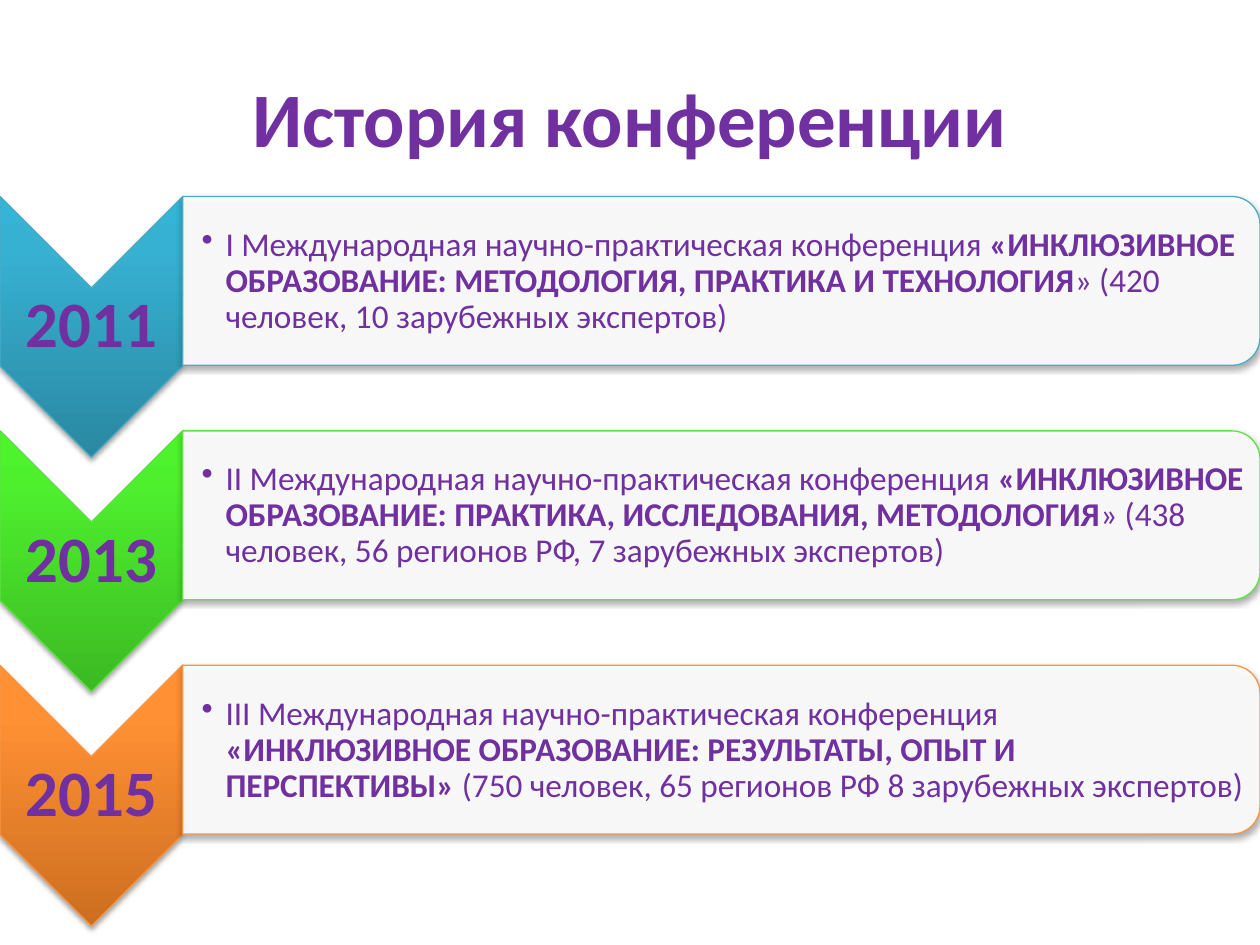
from lxml import etree
from pptx import Presentation
from pptx.dml.color import RGBColor
from pptx.enum import shapes, text
from pptx.oxml import ns, parse_xml
from pptx.util import Inches, Pt

TITLE = "История конференции"
# Year, gradient from bottom to top, outline, (plain, bold, plain) description
EVENTS = [
    ("2011", ("2A88A2", "37B1D2", "34B4D6"), RGBColor(0x4B, 0xAC, 0xC6),
     ("I Международная научно-практическая конференция ",
      "«ИНКЛЮЗИВНОЕ ОБРАЗОВАНИЕ: МЕТОДОЛОГИЯ, ПРАКТИКА И ТЕХНОЛОГИЯ",
      "» (420 человек, 10 зарубежных экспертов)")),
    ("2013", ("3CB923", "4EF02E", "4CF52A"), RGBColor(0x60, 0xE1, 0x46),
     ("II Международная научно-практическая конференция ",
      "«ИНКЛЮЗИВНОЕ ОБРАЗОВАНИЕ: ПРАКТИКА, ИССЛЕДОВАНИЯ, МЕТОДОЛОГИЯ",
      "» (438 человек, 56 регионов РФ, 7 зарубежных экспертов)")),
    ("2015", ("CC6E20", "FF9034", "FF9136"), RGBColor(0xF7, 0x96, 0x46),
     ("III Международная научно-практическая конференция ",
      "«ИНКЛЮЗИВНОЕ ОБРАЗОВАНИЕ: РЕЗУЛЬТАТЫ, ОПЫТ И ПЕРСПЕКТИВЫ»",
      " (750 человек, 65 регионов РФ 8 зарубежных экспертов)")),
]
STOPS = (0, 80, 100)
PURPLE = RGBColor(0x70, 0x30, 0xA0)
WHITE = RGBColor(0xFF, 0xFF, 0xFF)

# Layout in inches
TOP, PITCH = 1.56, 1.86
ARROW_W, ARROW_H = 1.45, 2.07
PANEL_W, PANEL_H = 8.55, 1.34


def write(tf, *parts, size, bold=(True,), align=None, spacing=None, margins=None):
    """Fill a text frame with one paragraph, one run for each part."""
    tf.word_wrap = True
    tf.vertical_anchor = text.MSO_ANCHOR.MIDDLE
    if margins:
        tf.margin_left, tf.margin_top, tf.margin_right, tf.margin_bottom = map(Inches, margins)
    p = tf.paragraphs[0]
    p.alignment, p.line_spacing = align, spacing
    for part, is_bold in zip(parts, bold):
        r = p.add_run()
        r.text = part
        r.font.name, r.font.size, r.font.bold = "Calibri", Pt(size), is_bold
        r.font.color.rgb = PURPLE
    return p


def add_bullet(p):
    pPr = p._p.get_or_add_pPr()
    pPr.set("marL", str(Inches(0.19)))
    pPr.set("indent", str(-Inches(0.19)))
    etree.SubElement(pPr, ns.qn("a:buChar"), char="•")


def add_turned(s, kind, left, top, width, height, line):
    """Add a shape turned by 90° that covers the given area."""
    cx, cy = left + width / 2, top + height / 2
    sp = s.shapes.add_shape(kind, Inches(cx - height / 2), Inches(cy - width / 2),
                            Inches(height), Inches(width))
    sp.rotation = 90
    sp.line.color.rgb, sp.line.width = line, Pt(0.75)
    sp.shadow.inherit = False
    effects = sp._element.spPr.find(ns.qn("a:effectLst"))
    effects.append(parse_xml(
        f'<a:outerShdw {ns.nsdecls("a")} blurRad="{Pt(3.1)}" dist="{Pt(1.8)}" '
        'dir="5400000" rotWithShape="0"><a:srgbClr val="000000">'
        '<a:alpha val="35000"/></a:srgbClr></a:outerShdw>'))
    return sp


def fill_gradient(sp, colors):
    stops = "".join(f'<a:gs pos="{pos * 1000}"><a:srgbClr val="{color}"/></a:gs>'
                    for pos, color in zip(STOPS, colors))
    sp._element.spPr.find(ns.qn("a:ln")).addprevious(parse_xml(
        f'<a:gradFill {ns.nsdecls("a")} rotWithShape="0"><a:gsLst>{stops}</a:gsLst>'
        '<a:lin ang="16200000" scaled="0"/></a:gradFill>'))


def fill_translucent(sp, color, percent):
    sp.fill.solid()
    sp.fill.fore_color.rgb = color
    clr = sp._element.spPr.find(ns.qn("a:solidFill"))[0]
    etree.SubElement(clr, ns.qn("a:alpha"), val=str(percent * 1000))


def add_text(s, left, top, width, height, *parts, **fmt):
    box = s.shapes.add_textbox(*map(Inches, (left, top, width, height)))
    return write(box.text_frame, *parts, spacing=0.9, **fmt)


def main():
    prs = Presentation()
    prs.slide_width, prs.slide_height = Inches(10), Inches(7.5)
    s = prs.slides.add_slide(prs.slide_layouts[5])

    # Title
    title = s.shapes.title
    title.left, title.top, title.width, title.height = map(Inches, (0.5, 0.3, 9, 1.25))
    write(title.text_frame, TITLE, size=44, align=text.PP_ALIGN.CENTER)

    # One row for each conference
    for i, (year, colors, line, description) in enumerate(EVENTS):
        top = TOP + i * PITCH
        arrow = add_turned(s, shapes.MSO_SHAPE.CHEVRON, 0, top, ARROW_W, ARROW_H, line)
        fill_gradient(arrow, colors)
        add_text(s, 0, top + ARROW_W / 2, ARROW_W, ARROW_H - ARROW_W, year,
                 size=37, align=text.PP_ALIGN.CENTER, margins=(0.03,) * 4)

        panel = add_turned(s, shapes.MSO_SHAPE.ROUND_2_SAME_RECTANGLE,
                           ARROW_W, top, PANEL_W, PANEL_H, line)
        fill_translucent(panel, WHITE, 90)
        p = add_text(s, ARROW_W, top + 0.07, 8.49, 1.21, *description, size=19,
                     bold=(False, True, False), margins=(0.15, 0.01, 0.01, 0.01))
        p.level = 1
        add_bullet(p)

    prs.save("out.pptx")


if __name__ == "__main__":
    main()
